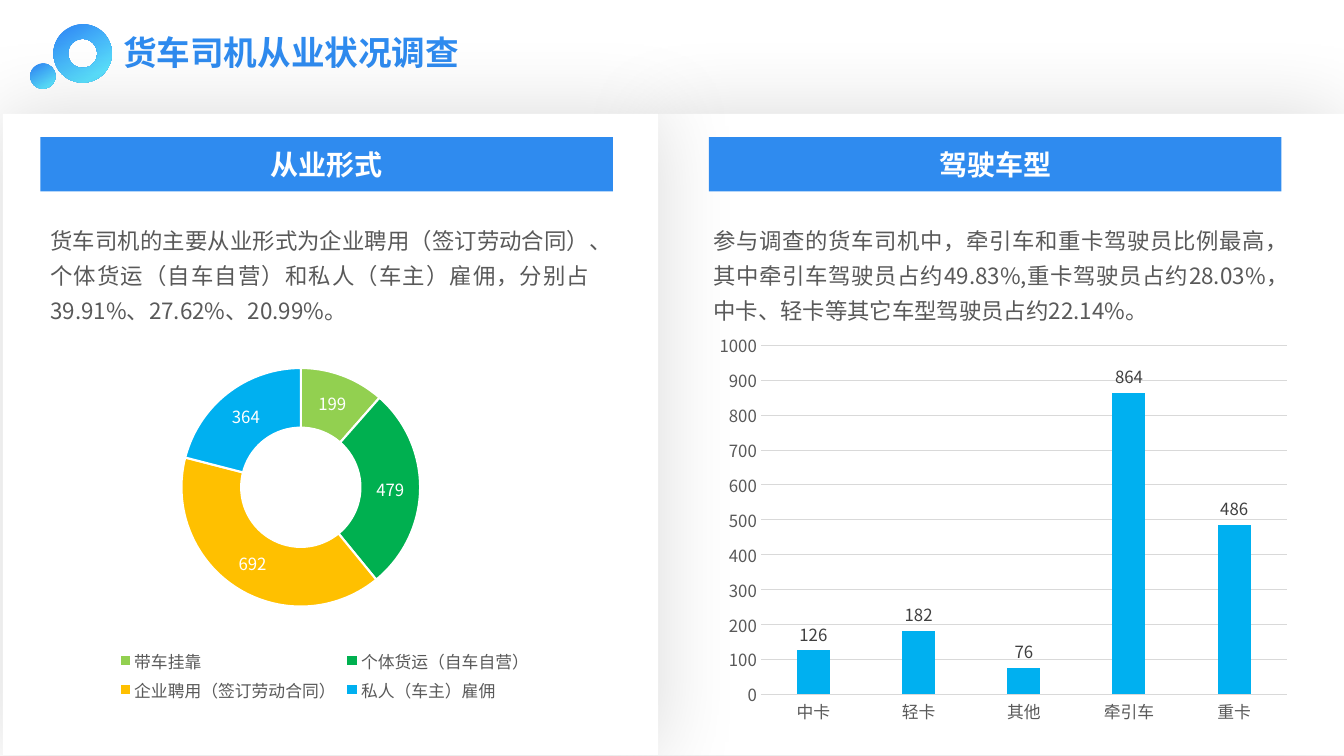
import pptx
import pptx.chart.data
import pptx.dml.color
import pptx.enum.chart
import pptx.enum.shapes
import pptx.enum.text
import pptx.oxml
import pptx.oxml.ns
import pptx.util
from pptx.util import Inches

FONT = "Noto Sans CJK SC"
BLUE, SKY, WHITE, GREY, GRID = "2F8BEF", "00B0F0", "FFFFFF", "595959", "D9D9D9"
FORMS = {
    "带车挂靠": (199, "92D050"),
    "个体货运（自车自营）": (479, "00B050"),
    "企业聘用（签订劳动合同）": (692, "FFC000"),
    "私人（车主）雇佣": (364, SKY),
}
TRUCKS = {"中卡": 126, "轻卡": 182, "其他": 76, "牵引车": 864, "重卡": 486}
FORMS_TEXT = (
    "货车司机的主要从业形式为企业聘用（签订劳动合同）、个体货运（自车自营）"
    "和私人（车主）雇佣，分别占39.91%、27.62%、20.99%。"
)
TRUCKS_TEXT = (
    "参与调查的货车司机中，牵引车和重卡驾驶员比例最高，其中牵引车驾驶员占约49.83%,"
    "重卡驾驶员占约28.03%，中卡、轻卡等其它车型驾驶员占约22.14%。"
)


def color(value):
    """Turn a hex string into a colour."""
    return pptx.dml.color.RGBColor.from_string(value)


def set_attributes(target, values):
    """Set each named attribute on the target."""
    for name, value in values.items():
        setattr(target, name, value)


def place(shape, box):
    """Move and size a shape to left, top, width and height in inches."""
    set_attributes(shape, dict(zip(("left", "top", "width", "height"), map(Inches, box))))


def format_font(font, size, hex_color, bold=False):
    """Give a font its face, size, colour and weight."""
    set_attributes(font, {"name": FONT, "size": pptx.util.Pt(size), "bold": bold})
    font.color.rgb = color(hex_color)


def format_line(line, hex_color, width):
    """Give a line its colour and width."""
    line.color.rgb = color(hex_color)
    line.width = pptx.util.Pt(width)


def write_text(shape, text, size, hex_color, bold=False, align="JUSTIFY", anchor="TOP", spacing=None):
    """Fill a shape with one formatted paragraph."""
    frame = shape.text_frame
    frame.text = text
    set_attributes(frame, {
        "word_wrap": True,
        "auto_size": pptx.enum.text.MSO_AUTO_SIZE.NONE,
        "vertical_anchor": pptx.enum.text.MSO_ANCHOR[anchor],
    })
    paragraph = frame.paragraphs[0]
    paragraph.alignment = pptx.enum.text.PP_ALIGN[align]
    if spacing:
        paragraph.line_spacing = pptx.util.Pt(spacing)
    format_font(paragraph.runs[0].font, size, hex_color, bold)


def add_plain_shape(slide, kind, box):
    """Add a preset shape without outline or shadow."""
    shape = slide.shapes.add_shape(pptx.enum.shapes.MSO_SHAPE[kind], *map(Inches, box))
    shape.shadow.inherit = False
    shape.line.fill.background()
    return shape


def add_panel(slide, box):
    """Add a white panel with a soft shadow."""
    panel = add_plain_shape(slide, "RECTANGLE", box)
    panel.fill.solid()
    panel.fill.fore_color.rgb = color(WHITE)
    effects = panel.element.spPr.find(pptx.oxml.ns.qn("a:effectLst"))
    effects.append(pptx.oxml.parse_xml(
        f'<a:outerShdw {pptx.oxml.ns.nsdecls("a")} blurRad="{pptx.util.Pt(60)}" dist="0" dir="0" '
        'algn="ctr" rotWithShape="0"><a:srgbClr val="000000"><a:alpha val="15000"/></a:srgbClr>'
        '</a:outerShdw>'
    ))


def add_gradient_shape(slide, kind, box):
    """Add a header ornament with the blue gradient."""
    shape = add_plain_shape(slide, kind, box)
    shape.fill.gradient()
    shape.fill.gradient_angle = 300
    stops = ((0.12, "338FF5"), (0.82, "5ADFFC"))
    for stop, (position, hex_color) in zip(shape.fill.gradient_stops, stops):
        stop.position = position
        stop.color.rgb = color(hex_color)


def add_banner(slide, text, box):
    """Add a blue section heading."""
    banner = add_plain_shape(slide, "RECTANGLE", box)
    banner.fill.solid()
    banner.fill.fore_color.rgb = color(BLUE)
    write_text(banner, text, 20, WHITE, bold=True, align="CENTER", anchor="MIDDLE")


def add_body(slide, text, box):
    """Add a justified body paragraph."""
    body = slide.shapes.add_textbox(*map(Inches, box))
    write_text(body, text, 16, GREY, spacing=25)


def add_chart(slide, kind, box, categories, values, label_color):
    """Add a one-series chart with value labels."""
    data = pptx.chart.data.CategoryChartData()
    data.categories = categories
    data.add_series("Series 1", values)
    chart_type = pptx.enum.chart.XL_CHART_TYPE[kind]
    chart = slide.shapes.add_chart(chart_type, *map(Inches, box), data).chart
    set_attributes(chart, {"has_title": False, "has_legend": False})
    format_font(chart.font, 10, "000000")
    plot = chart.plots[0]
    plot.has_data_labels = True
    set_attributes(plot.data_labels, {"show_value": True, "show_percentage": False})
    format_font(plot.data_labels.font, 12, label_color)
    return chart


def add_forms_chart(slide, box):
    """Add the doughnut of employment forms."""
    values, colors = zip(*FORMS.values())
    chart = add_chart(slide, "DOUGHNUT", box, list(FORMS), values, WHITE)
    chart.has_legend = True
    set_attributes(chart.legend, {
        "position": pptx.enum.chart.XL_LEGEND_POSITION.BOTTOM,
        "include_in_layout": False,
    })
    format_font(chart.legend.font, 12, GREY)
    for index, hex_color in enumerate(colors):
        point = chart.plots[0].series[0].points[index].format
        point.fill.solid()
        point.fill.fore_color.rgb = color(hex_color)
        format_line(point.line, WHITE, 1.5)
    area = chart.element.find(".//" + pptx.oxml.ns.qn("c:plotArea"))
    for layout in area.findall(pptx.oxml.ns.qn("c:layout")):
        area.remove(layout)
    sizes = "".join(f'<c:{name} val="{value}"/>' for name, value in
                    (("x", 0.23), ("y", 0), ("w", 0.45), ("h", 0.75)))
    area.insert(0, pptx.oxml.parse_xml(
        f'<c:layout {pptx.oxml.ns.nsdecls("c")}><c:manualLayout><c:layoutTarget val="inner"/>'
        f'<c:xMode val="edge"/><c:yMode val="edge"/>{sizes}</c:manualLayout></c:layout>'
    ))


def add_trucks_chart(slide, box):
    """Add the column chart of truck types."""
    chart = add_chart(slide, "COLUMN_CLUSTERED", box, list(TRUCKS), list(TRUCKS.values()), "404040")
    plot = chart.plots[0]
    set_attributes(plot, {"gap_width": 219, "overlap": -27, "vary_by_categories": False})
    plot.data_labels.position = pptx.enum.chart.XL_LABEL_POSITION.OUTSIDE_END
    fill = plot.series[0].format.fill
    fill.solid()
    fill.fore_color.rgb = color(SKY)
    no_tick = pptx.enum.chart.XL_TICK_MARK.NONE
    for axis in (chart.category_axis, chart.value_axis):
        set_attributes(axis, {"major_tick_mark": no_tick, "minor_tick_mark": no_tick})
        format_font(axis.tick_labels.font, 12, GREY)
    format_line(chart.category_axis.format.line, GRID, 0.75)
    chart.value_axis.format.line.fill.background()
    format_line(chart.value_axis.major_gridlines.format.line, GRID, 0.75)


def set_east_asian_font(element):
    """Use each Latin face for the Chinese characters as well."""
    for latin in list(element.iter(pptx.oxml.ns.qn("a:latin"))):
        latin.addnext(pptx.oxml.parse_xml(
            f'<a:ea {pptx.oxml.ns.nsdecls("a")} typeface="{FONT}"/>'
        ))


def main():
    """Build and save the slide."""
    presentation = pptx.Presentation()
    set_attributes(presentation, {"slide_width": Inches(13.33), "slide_height": Inches(7.5)})
    slide = presentation.slides.add_slide(presentation.slide_layouts[5])
    place(slide.shapes.title, (1.12, 0.27, 3.69, 0.5))
    write_text(slide.shapes.title, "货车司机从业状况调查", 24, BLUE, bold=True)
    add_panel(slide, (6.53, 1.13, 6.8, 6.36))
    add_gradient_shape(slide, "DONUT", (0.53, 0.24, 0.58, 0.58))
    add_gradient_shape(slide, "OVAL", (0.3, 0.63, 0.25, 0.25))
    add_panel(slide, (0.03, 1.13, 6.5, 6.36))
    add_banner(slide, "从业形式", (0.4, 1.36, 5.68, 0.54))
    add_banner(slide, "驾驶车型", (7.03, 1.36, 5.68, 0.54))
    add_body(slide, FORMS_TEXT, (0.4, 2.12, 5.55, 1.1))
    add_body(slide, TRUCKS_TEXT, (6.98, 2.12, 5.9, 1.1))
    add_trucks_chart(slide, (7.02, 3.22, 5.86, 4.04))
    add_forms_chart(slide, (0.59, 3.53, 5.26, 3.48))
    set_east_asian_font(slide.element)
    for shape in slide.shapes:
        if shape.has_chart:
            set_east_asian_font(shape.chart.element)
    presentation.save("out.pptx")


if __name__ == "__main__":
    main()
